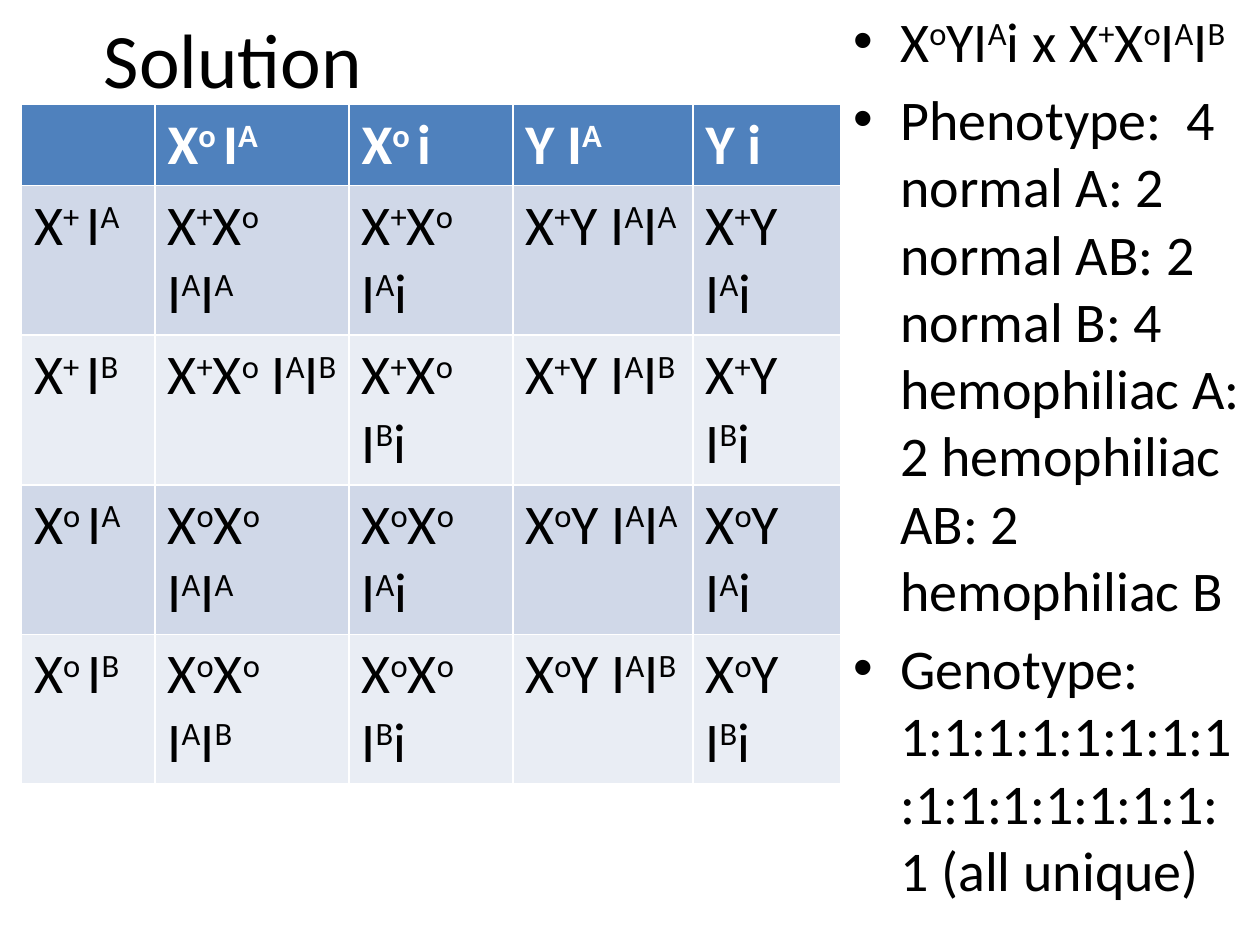
from pptx import Presentation
from pptx.dml.color import RGBColor
from pptx.enum.text import MSO_ANCHOR, MSO_AUTO_SIZE, PP_ALIGN
from pptx.util import Inches, Pt

CENTER = PP_ALIGN.CENTER
MIDDLE = MSO_ANCHOR.MIDDLE
NO_AUTOFIT = MSO_AUTO_SIZE.NONE

BLACK = RGBColor(0x00, 0x00, 0x00)
WHITE = RGBColor(0xFF, 0xFF, 0xFF)
HEADER_BLUE = RGBColor(0x4F, 0x81, 0xBD)
BANDS = [RGBColor(0xD0, 0xD8, 0xE8), RGBColor(0xE9, 0xED, 0xF4)]

FONT = "Calibri"
TITLE_SIZE = Pt(44)
TEXT_SIZE = Pt(32)


def add_runs(paragraph, marked_text, size=TEXT_SIZE, color=BLACK, bold=False):
    """Add runs to the paragraph; text between two ^ marks is superscript."""
    for index, part in enumerate(marked_text.split("^")):
        if not part:
            continue
        run = paragraph.add_run()
        run.text = part
        run.font.name = FONT
        run.font.size = size
        run.font.bold = bold
        run.font.color.rgb = color
        if index % 2:
            run._r.get_or_add_rPr().set("baseline", "30000")


def place(shape, left, top, width, height):
    shape.left, shape.top = Inches(left), Inches(top)
    shape.width, shape.height = Inches(width), Inches(height)


presentation = Presentation()
presentation.slide_width = Inches(10)
presentation.slide_height = Inches(7.5)
slide = presentation.slides.add_slide(presentation.slide_layouts[1])

# Title
title = slide.shapes.title
place(title, 0.03, 0, 3.64, 0.92)
title.text_frame.auto_size = NO_AUTOFIT
title.text_frame.vertical_anchor = MIDDLE
title_paragraph = title.text_frame.paragraphs[0]
title_paragraph.alignment = CENTER
add_runs(title_paragraph, "Solution", TITLE_SIZE)

# Cross and ratios, in the right third of the slide
body = slide.placeholders[1]
place(body, 6.67, 0, 3.33, 7.5)
body.text_frame.auto_size = NO_AUTOFIT
bullets = [
    "X^o^YI^A^i x X^+^X^o^I^A^I^B^",
    "Phenotype:  4 normal A: 2 normal AB: 2 normal B: 4 hemophiliac A: "
    "2 hemophiliac AB: 2 hemophiliac B",
    "Genotype:  " + ":".join(["1"] * 16) + " (all unique)",
]
for index, bullet in enumerate(bullets):
    if index:
        paragraph = body.text_frame.add_paragraph()
    else:
        paragraph = body.text_frame.paragraphs[0]
    add_runs(paragraph, bullet)

# Punnett square: father's gametes across, mother's gametes down
square = [["", "X^o ^I^A^", "X^o ^i", "Y I^A^", "Y i"]]
for x in "+o":
    for blood in "AB":
        square.append([
            f"X^{x} ^I^{blood}^",
            f"X^{x}^X^o^ I^A^I^{blood}^",
            f"X^{x}^X^o ^I^{blood}^i",
            f"X^{x}^Y I^A^I^{blood}^",
            f"X^{x}^Y I^{blood}^i",
        ])

column_widths = [1.06, 1.54, 1.3, 1.43, 1.17]
table_shape = slide.shapes.add_table(
    len(square), len(column_widths),
    Inches(0.17), Inches(0.83), Inches(6.5), Inches(5.3))
table = table_shape.table
for column, width in zip(table.columns, column_widths):
    column.width = Inches(width)

for row_index, genotypes in enumerate(square):
    is_header = row_index == 0
    # Rows start at a minimum height and grow with their text
    table.rows[row_index].height = Inches(0.41)
    for column_index, genotype in enumerate(genotypes):
        cell = table.cell(row_index, column_index)
        cell.fill.solid()
        cell.fill.fore_color.rgb = (
            HEADER_BLUE if is_header else BANDS[(row_index - 1) % 2])
        add_runs(cell.text_frame.paragraphs[0], genotype,
                 color=WHITE if is_header else BLACK, bold=is_header)
table_shape.height = Inches(5.3)

presentation.save("out.pptx")
